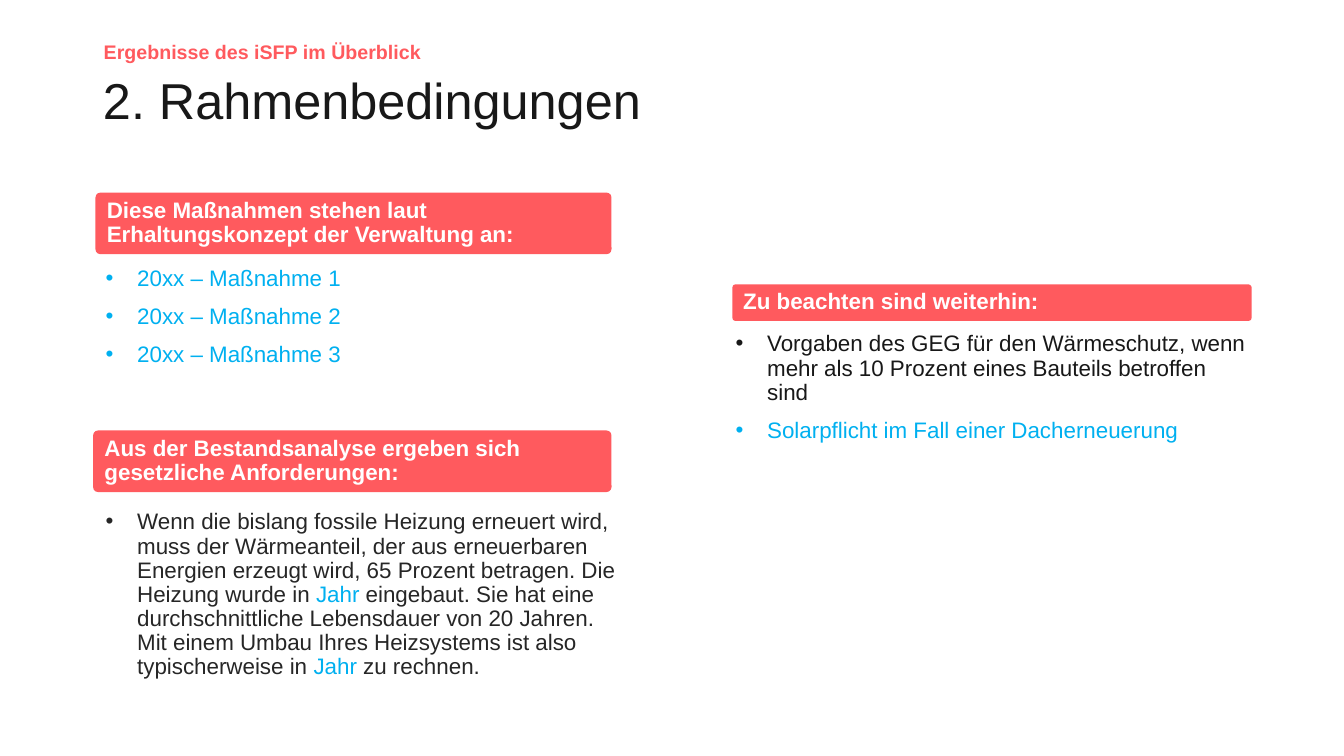
from lxml.etree import SubElement
from pptx import Presentation
from pptx.dml.color import RGBColor
from pptx.enum.shapes import MSO_SHAPE as SHAPE
from pptx.enum.text import MSO_ANCHOR as ANCHOR
from pptx.oxml.ns import qn
from pptx.util import Pt

CORAL = RGBColor(0xFF, 0x5A, 0x5E)
BLUE = RGBColor(0x00, 0xB0, 0xF0)
INK = RGBColor(0x18, 0x18, 0x18)
GREY = RGBColor(0x26, 0x26, 0x26)
WHITE = RGBColor(0xFF, 0xFF, 0xFF)

FONT = "Arial"
BULLET_INDENT = Pt(22.5)
PARAGRAPH_GAP = Pt(10)

MEASURES = [[(f"20xx – Maßnahme {n}", BLUE)] for n in (1, 2, 3)]
HEATING = [[
    ("Wenn die bislang fossile Heizung erneuert wird, muss der Wärmeanteil, "
     "der aus erneuerbaren Energien erzeugt wird, 65 Prozent betragen. "
     "Die Heizung wurde in ", GREY),
    ("Jahr", BLUE),
    (" eingebaut. Sie hat eine durchschnittliche Lebensdauer von 20 Jahren. "
     "Mit einem Umbau Ihres Heizsystems ist also typischerweise in ", GREY),
    ("Jahr", BLUE),
    (" zu rechnen.", GREY),
]]
RULES = [
    [("Vorgaben des GEG für den Wärmeschutz, wenn mehr als 10 Prozent "
      "eines Bauteils betroffen sind", INK)],
    [("Solarpflicht im Fall einer Dacherneuerung", BLUE)],
]


def set_bullet(p):
    pPr = p._p.get_or_add_pPr()
    pPr.set("marL", str(BULLET_INDENT))
    pPr.set("indent", str(-BULLET_INDENT))
    SubElement(pPr, qn("a:buFont")).set("typeface", FONT)
    SubElement(pPr, qn("a:buChar")).set("char", "•")


def write(sp, paragraphs, size, bold=False, bullets=False, anchor=ANCHOR.TOP):
    """Fill a shape with paragraphs, each a list of (text, colour) runs."""
    tf = sp.text_frame
    tf.word_wrap = True
    tf.vertical_anchor = anchor
    for i, runs in enumerate(paragraphs):
        p = tf.add_paragraph() if i else tf.paragraphs[0]
        p.line_spacing = 0.9
        if i:
            p.space_before = PARAGRAPH_GAP
        if bullets:
            set_bullet(p)
        for text, color in runs:
            r = p.add_run()
            r.text = text
            style = {"name": FONT, "size": Pt(size), "bold": bold}
            for key, value in style.items():
                setattr(r.font, key, value)
            r.font.color.rgb = color


def add_text(s, box, paragraphs, size, **options):
    sp = s.shapes.add_textbox(*map(Pt, box))
    write(sp, paragraphs, size, **options)


def add_banner(s, box, text):
    sp = s.shapes.add_shape(SHAPE.ROUNDED_RECTANGLE, *map(Pt, box))
    sp.adjustments[0] = 0.08
    sp.shadow.inherit = False
    sp.fill.solid()
    sp.fill.fore_color.rgb = CORAL
    sp.line.fill.background()
    write(sp, [[(text, WHITE)]], 16, bold=True, anchor=ANCHOR.MIDDLE)
    sp.text_frame.paragraphs[0].alignment = 1


def main():
    prs = Presentation()
    prs.slide_width, prs.slide_height = Pt(960), Pt(540)
    s = prs.slides.add_slide(prs.slide_layouts[6])
    s.background.fill.solid()
    s.background.fill.fore_color.rgb = WHITE

    add_text(s, (67, 26.5, 553, 29), [[("Ergebnisse des iSFP im Überblick", CORAL)]],
             14, bold=True)
    add_text(s, (66.5, 52, 828, 43), [[("2. Rahmenbedingungen", INK)]],
             36, anchor=ANCHOR.MIDDLE)

    add_banner(s, (68.2, 137.6, 368.6, 44),
               "Diese Maßnahmen stehen laut Erhaltungskonzept der Verwaltung an:")
    add_text(s, (68.4, 187, 381, 94), MEASURES, 16, bullets=True)

    add_banner(s, (66.5, 307.5, 370.3, 44),
               "Aus der Bestandsanalyse ergeben sich gesetzliche Anforderungen:")
    add_text(s, (68.4, 361.2, 381, 94), HEATING, 16, bullets=True)

    add_banner(s, (523.2, 203.2, 370.8, 26), "Zu beachten sind weiterhin:")
    add_text(s, (518.4, 234, 381, 106), RULES, 16, bullets=True)

    prs.save("out.pptx")


if __name__ == "__main__":
    main()
